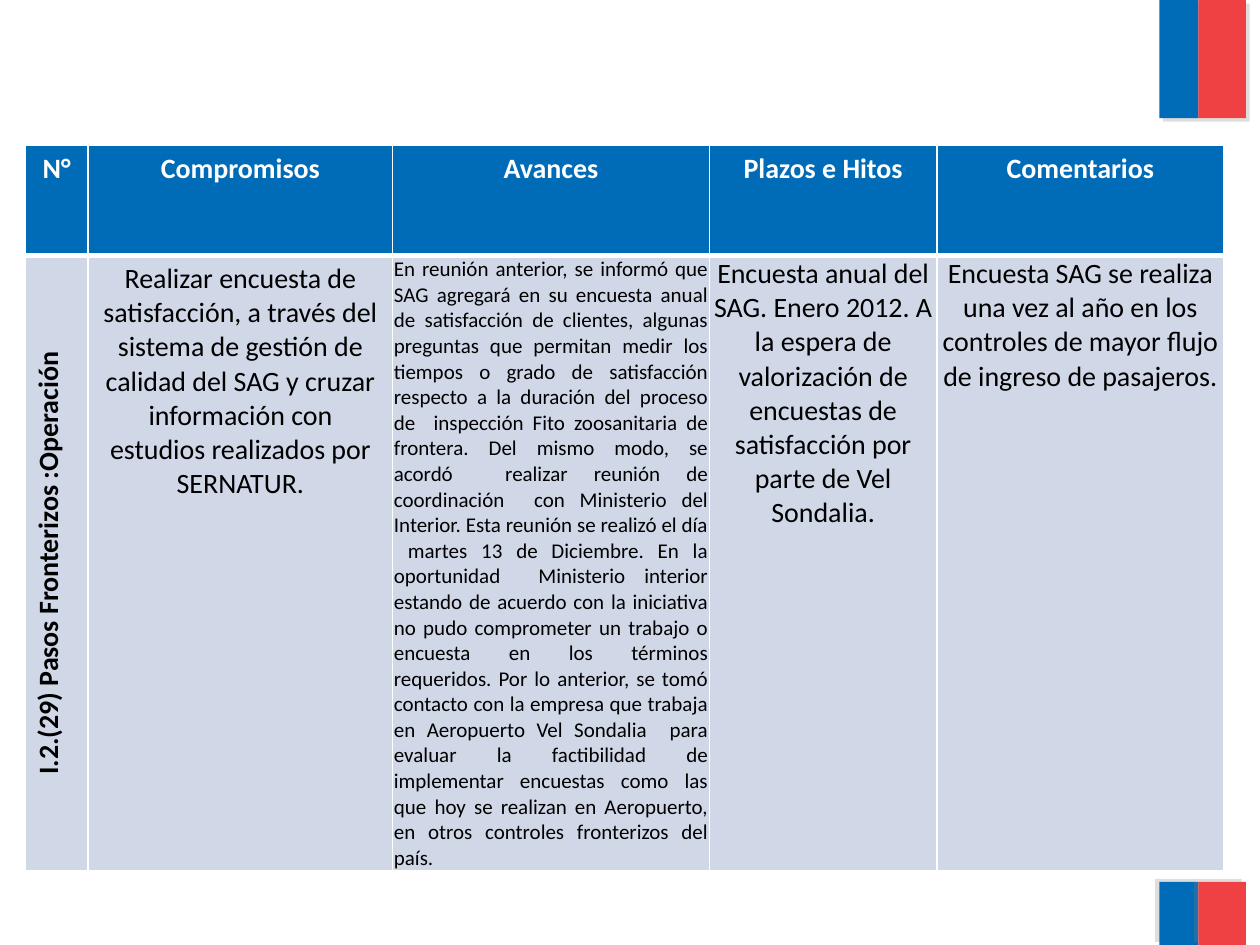
from dataclasses import dataclass

from lxml.etree import SubElement
from pptx import Presentation
from pptx.dml.color import RGBColor
from pptx.enum.shapes import MSO_SHAPE
from pptx.enum.text import PP_ALIGN
from pptx.oxml import parse_xml
from pptx.oxml.ns import nsdecls, qn
from pptx.util import Pt


@dataclass(frozen=True)
class Theme:
    """Colours, font and type sizes of the slide."""
    blue: str = "006CB7"
    red: str = "EF4144"
    pale: str = "D0D8E8"
    white: str = "FFFFFF"
    black: str = "000000"
    shadow: str = "808080"
    font: str = "Calibri"
    normal: int = 16
    small: int = 12


THEME = Theme()
COLUMNS = (36, 174, 181, 130, 164)
ROWS = (63, 333)
HEADERS = ("N°", "Compromisos", "Avances", "Plazos e Hitos", "Comentarios")
TIGHT = (0.72, 0.72, 0.72, 0)
BODY = (
    ("I.2.(29) Pasos Fronterizos :Operación", dict(bold=True, vert="vert270")),
    ("Realizar encuesta de satisfacción, a través del sistema de gestión de "
     "calidad del SAG y cruzar información con estudios realizados por "
     "SERNATUR.", {}),
    ("En reunión anterior, se informó que SAG agregará en su encuesta anual de "
     "satisfacción de clientes, algunas preguntas que permitan medir los "
     "tiempos o grado de satisfacción respecto a la duración del proceso de  "
     "inspección Fito zoosanitaria de frontera. Del mismo modo, se acordó  "
     "realizar reunión de coordinación  con Ministerio del Interior. Esta "
     "reunión se realizó el día  martes 13 de Diciembre. En la oportunidad  "
     "Ministerio interior estando de acuerdo con la iniciativa no pudo "
     "comprometer un trabajo o encuesta en los términos requeridos. Por lo "
     "anterior, se tomó contacto con la empresa que trabaja en Aeropuerto "
     "Vel Sondalia  para evaluar la factibilidad de implementar encuestas como "
     "las que hoy se realizan en Aeropuerto, en otros controles fronterizos "
     "del país.",
     dict(size=THEME.small, align=PP_ALIGN.JUSTIFY, insets=TIGHT)),
    ("Encuesta anual del SAG. Enero 2012. A la espera de valorización de "
     "encuestas de satisfacción por parte de Vel Sondalia.",
     dict(insets=TIGHT)),
    ("Encuesta SAG se realiza una vez al año en los controles de mayor flujo "
     "de ingreso de pasajeros.", dict(insets=TIGHT)),
)


def rgb(color):
    """Return the colour object for a hex value."""
    return RGBColor.from_string(color)


def add_shadow(sp, angle):
    """Give a shape a hard, translucent shadow at an angle in degrees."""
    sp.shadow.inherit = False
    effects = sp.element.spPr.find(qn("a:effectLst"))
    outer = SubElement(effects, qn("a:outerShdw"), dist=str(Pt(3)),
                       dir=str(angle * 60000), algn="ctr", rotWithShape="0")
    color = SubElement(outer, qn("a:srgbClr"), val=THEME.shadow)
    SubElement(color, qn("a:alpha"), val="25000")


def add_band(slide, left, top, width, height, angle):
    """Draw a blue and red band whose blue part takes 45% of the width."""
    split = width * 0.45
    parts = ((0, split, THEME.blue), (split, width - split, THEME.red))
    for offset, part_width, color in parts:
        sp = slide.shapes.add_shape(MSO_SHAPE.RECTANGLE, Pt(left + offset),
                                    Pt(top), Pt(part_width), Pt(height))
        sp.fill.solid()
        sp.fill.fore_color.rgb = rgb(color)
        sp.line.fill.background()
        add_shadow(sp, angle)


def write_text(cell, text, size=THEME.normal, color=THEME.black, bold=False,
               align=PP_ALIGN.CENTER, insets=None, vert=None):
    """Write formatted text into a table cell."""
    p = cell.text_frame.paragraphs[0]
    p.alignment = align
    r = p.add_run()
    r.text = text
    r.font.name = THEME.font
    r.font.size = Pt(size)
    r.font.bold = bold
    r.font.color.rgb = rgb(color)
    if insets:
        (cell.margin_left, cell.margin_top,
         cell.margin_right, cell.margin_bottom) = map(Pt, insets)
    if vert:
        cell._tc.get_or_add_tcPr().set("vert", vert)


def paint_cell(cell, color, top=1, bottom=1):
    """Fill a cell and draw its white borders."""
    cell.fill.solid()
    cell.fill.fore_color.rgb = rgb(color)
    tc_pr = cell._tc.get_or_add_tcPr()
    for i, (side, width) in enumerate(zip("LRTB", (1, 1, top, bottom))):
        tc_pr.insert(i, parse_xml(
            f'<a:ln{side} {nsdecls("a")} w="{Pt(width)}"><a:solidFill>'
            f'<a:srgbClr val="{THEME.white}"/></a:solidFill></a:ln{side}>'))


def add_commitments(slide, left, top, width, height):
    """Build the table of commitments in the given box."""
    table = slide.shapes.add_table(len(ROWS), len(COLUMNS), Pt(left), Pt(top),
                                   Pt(width), Pt(height)).table
    for column, share in zip(table.columns, COLUMNS):
        column.width = Pt(width * share / sum(COLUMNS))
    for row, share in zip(table.rows, ROWS):
        row.height = Pt(height * share / sum(ROWS))
    for i, (header, (text, style)) in enumerate(zip(HEADERS, BODY)):
        head, body = table.cell(0, i), table.cell(1, i)
        write_text(head, header, color=THEME.white, bold=True)
        paint_cell(head, THEME.blue, bottom=3)
        write_text(body, text, **style)
        paint_cell(body, THEME.pale, top=3)


def main():
    """Build and save the slide."""
    prs = Presentation()
    prs.slide_width, prs.slide_height = Pt(720), Pt(540)
    slide = prs.slides.add_slide(prs.slide_layouts[6])
    add_band(slide, 662.5, 0, 49.5, 67.5, angle=45)
    add_band(slide, 662.5, 504, 49.5, 36, angle=215)
    add_commitments(slide, 14.4, 83, sum(COLUMNS), sum(ROWS))
    prs.save("out.pptx")


if __name__ == "__main__":
    main()
